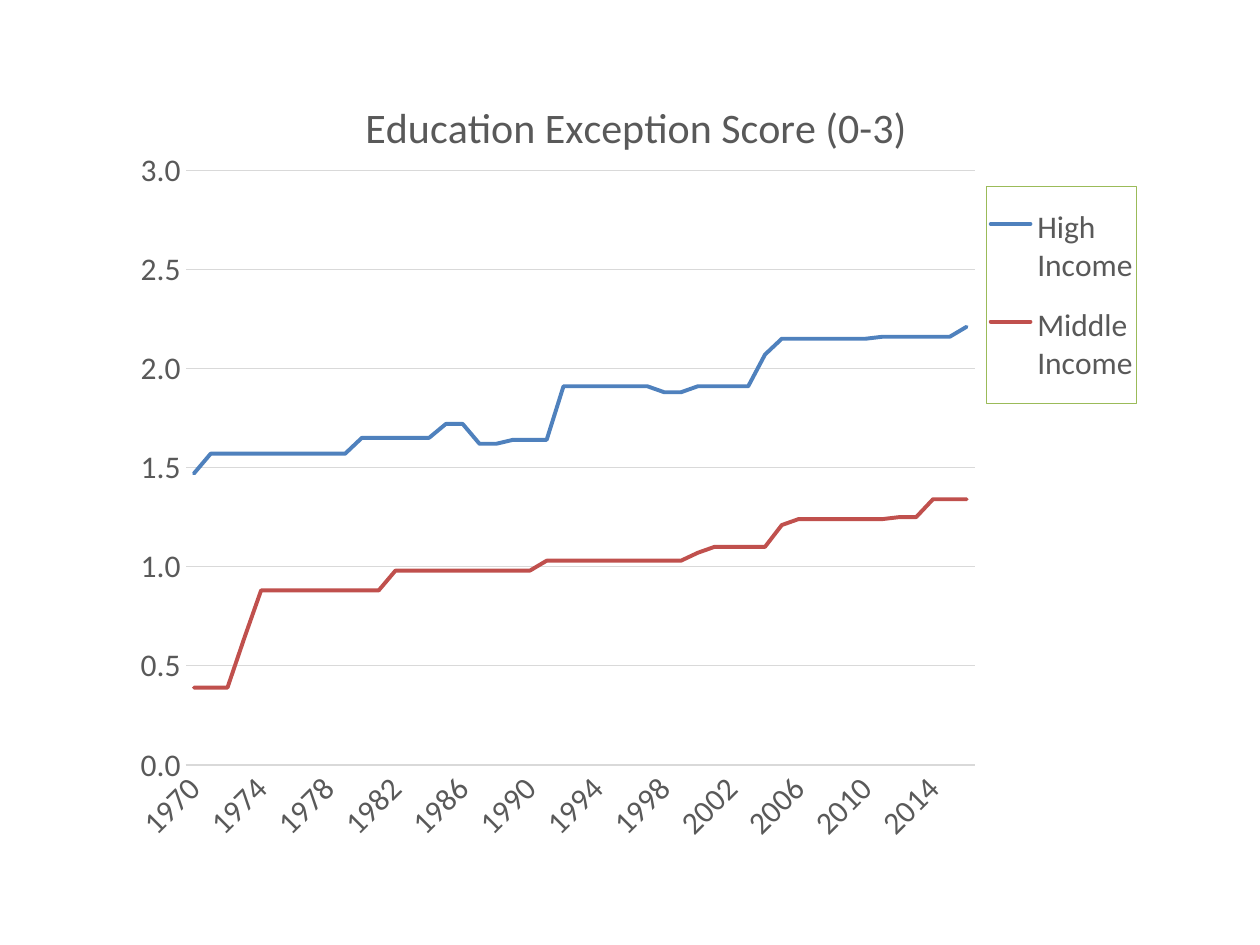
from dataclasses import dataclass
from itertools import chain, repeat

from lxml import etree
from pptx import Presentation
from pptx.chart.data import CategoryChartData
from pptx.dml.color import RGBColor
from pptx.enum.chart import XL_CHART_TYPE, XL_LEGEND_POSITION, XL_TICK_MARK
from pptx.oxml import parse_xml
from pptx.oxml.ns import nsdecls, qn
from pptx.util import Emu, Pt

LINE_CHART = XL_CHART_TYPE.LINE
LEGEND_RIGHT = XL_LEGEND_POSITION.RIGHT
NO_TICK = XL_TICK_MARK.NONE

PX = 914400 // 126
YEARS = range(1970, 2017)
LABEL_STEP = 4
LABEL_ROTATION = -45 * 60000


@dataclass(frozen=True)
class Theme:
    font: str = "Calibri"
    text: RGBColor = RGBColor(0x59, 0x59, 0x59)
    grid: RGBColor = RGBColor(0xD9, 0xD9, 0xD9)
    legend_border: str = "9BBB59"
    title_size: Pt = Pt(24)
    label_size: Pt = Pt(18)
    grid_width: Pt = Pt(0.75)
    series_width: Pt = Pt(2.25)


@dataclass(frozen=True)
class IncomeGroup:
    name: str
    color: RGBColor
    steps: tuple[tuple[float, int], ...]  # (score, number of years held)

    def scores(self) -> list[float]:
        return list(chain.from_iterable(repeat(score, years) for score, years in self.steps))


THEME = Theme()
GROUPS = (
    IncomeGroup("High Income", RGBColor(0x4F, 0x81, 0xBD), (
        (1.47, 1), (1.57, 9), (1.65, 5), (1.72, 2), (1.62, 2), (1.64, 3), (1.91, 6),
        (1.88, 2), (1.91, 4), (2.07, 1), (2.15, 6), (2.16, 5), (2.21, 1))),
    IncomeGroup("Middle Income", RGBColor(0xC0, 0x50, 0x4D), (
        (0.39, 3), (0.64, 1), (0.88, 8), (0.98, 9), (1.03, 9), (1.07, 1), (1.1, 4),
        (1.21, 1), (1.24, 6), (1.25, 2), (1.34, 3))),
)


def px(length: int) -> Emu:
    return Emu(length * PX)


def style_font(font, size: Pt) -> None:
    font.name, font.size, font.bold = THEME.font, size, False
    font.color.rgb = THEME.text


def style_line(line, color: RGBColor, width: Pt) -> None:
    line.color.rgb = color
    line.width = width


def set_layout(element, index: int, **values) -> None:
    """Give a chart part a manual layout, in fractions of the chart."""
    for old in element.findall(qn("c:layout")):
        element.remove(old)
    layout = etree.Element(qn("c:layout"))
    manual = etree.SubElement(layout, qn("c:manualLayout"))
    for tag, value in values.items():
        etree.SubElement(manual, qn(f"c:{tag}")).set("val", str(value))
    element.insert(index, layout)


def style_title(chart) -> None:
    frame = chart.chart_title.text_frame
    run = frame.paragraphs[0].add_run()
    run.text = "Education Exception Score (0-3)"
    style_font(run.font, THEME.title_size)
    set_layout(chart.chart_title._element, 1, xMode="edge", yMode="edge", x=0.243, y=0.035)


def style_axes(chart) -> None:
    for axis in (chart.category_axis, chart.value_axis):
        axis.major_tick_mark = axis.minor_tick_mark = NO_TICK
        style_font(axis.tick_labels.font, THEME.label_size)

    # Years, slanted and thinned out
    years = chart.category_axis
    style_line(years.format.line, THEME.grid, THEME.grid_width)
    body = years._element.find(qn("c:txPr")).find(qn("a:bodyPr"))
    body.set("rot", str(LABEL_ROTATION))
    body.set("vert", "horz")
    skip = etree.Element(qn("c:tickLblSkip"))
    skip.set("val", str(LABEL_STEP))
    years._element.find(qn("c:noMultiLvlLbl")).addprevious(skip)

    # Scores
    scores = chart.value_axis
    scores.minimum_scale, scores.maximum_scale, scores.major_unit = 0, 3, 0.5
    scores.tick_labels.number_format = "#,##0.0"
    scores.tick_labels.number_format_is_linked = False
    scores.format.line.fill.background()
    scores.has_major_gridlines = True
    style_line(scores.major_gridlines.format.line, THEME.grid, THEME.grid_width)


def style_legend(chart) -> None:
    chart.has_legend = True
    legend = chart.legend
    legend.position = LEGEND_RIGHT
    legend.include_in_layout = False
    style_font(legend.font, THEME.label_size)
    set_layout(legend._element, 1, xMode="edge", yMode="edge", x=0.838, y=0.15, w=0.142, h=0.263)
    border = parse_xml(
        f'<c:spPr {nsdecls("c", "a")}><a:noFill/><a:ln w="{THEME.grid_width}"><a:solidFill>'
        f'<a:srgbClr val="{THEME.legend_border}"/></a:solidFill></a:ln></c:spPr>')
    legend._element.find(qn("c:overlay")).addnext(border)


def add_score_chart(slide) -> None:
    data = CategoryChartData(number_format="0.00")
    data.categories = [str(year) for year in YEARS]
    for group in GROUPS:
        data.add_series(group.name, group.scores())
    chart = slide.shapes.add_chart(
        LINE_CHART, px(101), px(63), px(1057), px(825), data).chart
    chart.font.name = THEME.font

    style_title(chart)
    style_axes(chart)
    style_legend(chart)
    set_layout(chart._chartSpace.chart.plotArea, 0, layoutTarget="inner",
               xMode="edge", yMode="edge", x=0.08, y=0.13, w=0.747, h=0.721)

    plot = chart.plots[0]
    plot.vary_by_categories = False
    for series, group in zip(plot.series, GROUPS):
        series.smooth = False
        style_line(series.format.line, group.color, THEME.series_width)
        series._element.find(qn("c:spPr")).find(qn("a:ln")).set("cap", "rnd")


def main() -> None:
    presentation = Presentation()
    presentation.slide_width, presentation.slide_height = px(1260), px(945)
    slide = presentation.slides.add_slide(presentation.slide_layouts[6])
    add_score_chart(slide)
    presentation.save("out.pptx")


if __name__ == "__main__":
    main()
